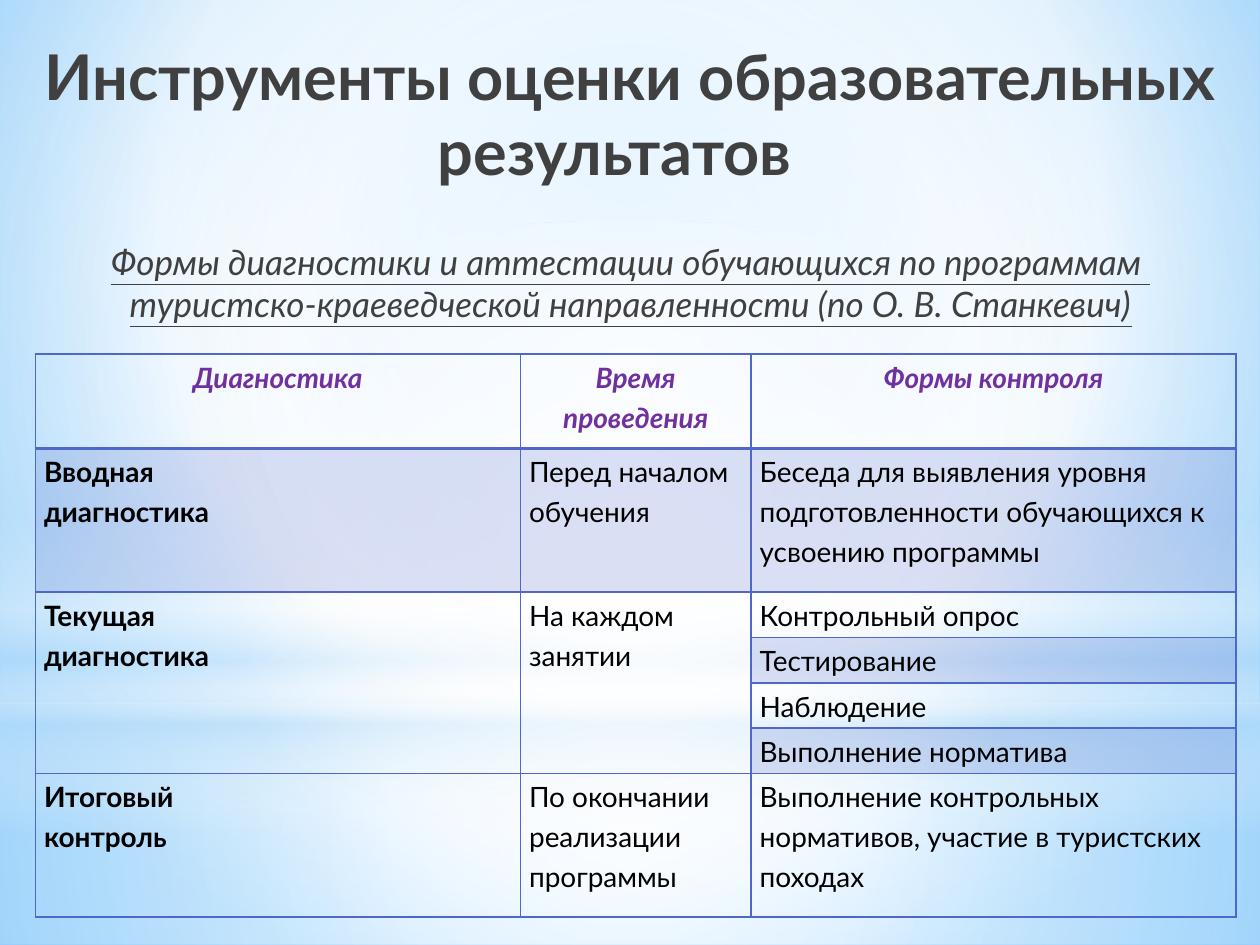
from lxml import etree
from pptx import Presentation
from pptx.dml.color import RGBColor
from pptx.enum.shapes import MSO_SHAPE
from pptx.enum.text import MSO_ANCHOR, PP_ALIGN
from pptx.oxml.ns import qn
from pptx.util import Pt

SCALE = 9144
FONT = "Lato"
GRAY, PURPLE, BLACK, BLUE = "404040", "7030A0", "000000", "4E67C8"
WHITE, SKY = "FFFFFF", "B4DCFA"
RECT, OVAL = MSO_SHAPE.RECTANGLE, MSO_SHAPE.OVAL
CENTER, LEFT, JUSTIFY = PP_ALIGN.CENTER, PP_ALIGN.LEFT, PP_ALIGN.JUSTIFY
MIDDLE, TOP = MSO_ANCHOR.MIDDLE, MSO_ANCHOR.TOP
MIDPOINT = (50, 50, 50, 50)

COLS = [385, 183, 385]
ROWS = [75, 114, 36, 36, 36, 36, 114]
SHADED = {(1, 0), (1, 1), (1, 2), (3, 2), (5, 2)}
CELLS = [
    ["Диагностика", "Время проведения", "Формы контроля"],
    ["Вводная\nдиагностика", "Перед началом обучения",
     "Беседа для выявления уровня подготовленности обучающихся к усвоению программы"],
    ["Текущая\nдиагностика", "На каждом занятии", "Контрольный опрос"],
    ["", "", "Тестирование"],
    ["", "", "Наблюдение"],
    ["", "", "Выполнение норматива"],
    ["Итоговый\nконтроль", "По окончании реализации программы",
     "Выполнение контрольных нормативов, участие в туристских походах"],
]


def px(n):
    return n * SCALE


def rgb(color):
    return RGBColor.from_string(color)


def add_color(parent, color, alpha=100):
    clr = etree.SubElement(parent, qn("a:srgbClr"), val=color)
    if alpha < 100:
        etree.SubElement(clr, qn("a:alpha"), val=str(alpha * 1000))


def set_gradient(owner, props, stops, focus=None):
    owner.fill.solid()
    solid = props.find(qn("a:solidFill"))
    grad = etree.Element(qn("a:gradFill"), rotWithShape="1")
    props.replace(solid, grad)
    gs_list = etree.SubElement(grad, qn("a:gsLst"))
    for pos, color, alpha in stops:
        gs = etree.SubElement(gs_list, qn("a:gs"), pos=str(pos * 1000))
        add_color(gs, color, alpha)
    if focus:
        circle = etree.SubElement(grad, qn("a:path"), path="circle")
        sides = {k: str(v * 1000) for k, v in zip("ltrb", focus)}
        etree.SubElement(circle, qn("a:fillToRect"), sides)
    else:
        etree.SubElement(grad, qn("a:lin"), ang="5400000", scaled="0")


def add_background(slide):
    bg = slide.background
    bg.fill.solid()
    set_gradient(bg, slide._element.find(".//" + qn("p:bgPr")),
                 [(0, "9ED5FF", 100), (60, WHITE, 100), (100, "5BB9FF", 100)],
                 (20, 10, 20, 60))


def add_glow(slide, kind, top, height, stops, focus=None):
    sp = slide.shapes.add_shape(kind, 0, px(top), px(1000), px(height))
    sp.shadow.inherit = False
    sp.line.fill.background()
    set_gradient(sp, sp._element.spPr, stops, focus)


def style_text(tf, size, color, align, bold=False, italic=False, underline=False, spacing=1.0):
    for p in tf.paragraphs:
        p.alignment = align
        p.line_spacing = spacing
        for r in p.runs:
            font = r.font
            font.name, font.size, font.color.rgb = FONT, Pt(size), rgb(color)
            font.bold, font.italic, font.underline = bold, italic, underline


def add_text(slide, left, top, width, height, text, anchor, *style, **flags):
    box = slide.shapes.add_textbox(px(left), px(top), px(width), px(height))
    tf = box.text_frame
    tf.word_wrap = True
    tf.vertical_anchor = anchor
    tf.text = text
    style_text(tf, *style, **flags)


def set_borders(cell, bottom):
    props = cell._tc.get_or_add_tcPr()
    for side in "LRTB":
        width = bottom if side == "B" else 1
        ln = etree.SubElement(props, qn("a:ln" + side), w=str(Pt(width)))
        add_color(etree.SubElement(ln, qn("a:solidFill")), BLUE)


def set_cell_fill(cell, shaded):
    if not shaded:
        cell.fill.background()
        return
    cell.fill.solid()
    cell.fill.fore_color.rgb = rgb(BLUE)
    clr = cell._tc.tcPr.find(qn("a:solidFill")).find(qn("a:srgbClr"))
    etree.SubElement(clr, qn("a:alpha"), val="20000")


def fill_cell(cell, row, col, text):
    header = row == 0
    set_borders(cell, 2 if header else 1)
    set_cell_fill(cell, (row, col) in SHADED)
    cell.margin_left = cell.margin_right = px(7)
    cell.margin_top = cell.margin_bottom = 0
    if text:
        cell.text_frame.text = text
        align = CENTER if header else JUSTIFY if col == 0 else LEFT
        style_text(cell.text_frame, 16, PURPLE if header else BLACK, align,
                   bold=header or col == 0, italic=header, spacing=1.2)


def add_forms_table(slide):
    frame = slide.shapes.add_table(len(ROWS), len(COLS), px(28), px(281),
                                   px(sum(COLS)), px(sum(ROWS)))
    table = frame.table
    table.first_row = table.horz_banding = False
    for column, width in zip(table.columns, COLS):
        column.width = px(width)
    for row, height in zip(table.rows, ROWS):
        row.height = px(height)
    for i, texts in enumerate(CELLS):
        for j, text in enumerate(texts):
            fill_cell(table.cell(i, j), i, j, text)
    for j in range(2):
        table.cell(2, j).merge(table.cell(5, j))


def main():
    prs = Presentation()
    prs.slide_width, prs.slide_height = px(1000), px(750)
    slide = prs.slides.add_slide(prs.slide_layouts[6])
    add_background(slide)
    add_glow(slide, RECT, 558, 192,
             [(0, WHITE, 91), (37, WHITE, 76), (100, SKY, 79)], MIDPOINT)
    add_glow(slide, RECT, 0, 558,
             [(0, WHITE, 89), (48, WHITE, 62), (100, SKY, 79)], MIDPOINT)
    add_glow(slide, RECT, 412, 250,
             [(0, WHITE, 0), (29, WHITE, 30), (45, SKY, 40),
              (55, WHITE, 26), (65, SKY, 60), (100, WHITE, 0)])
    add_glow(slide, OVAL, 175, 558, [(0, WHITE, 100), (56, WHITE, 0)], MIDPOINT)
    add_text(slide, 0, 20, 1000, 139, "Инструменты оценки образовательных результатов  ",
             MIDDLE, 36, GRAY, CENTER, bold=True)
    add_text(slide, 40, 186, 921, 77,
             "Формы диагностики и аттестации обучающихся по программам \n"
             "туристско-краеведческой направленности (по О. В. Станкевич)",
             TOP, 20, GRAY, CENTER, italic=True, underline=True)
    add_forms_table(slide)
    prs.save("out.pptx")


if __name__ == "__main__":
    main()
